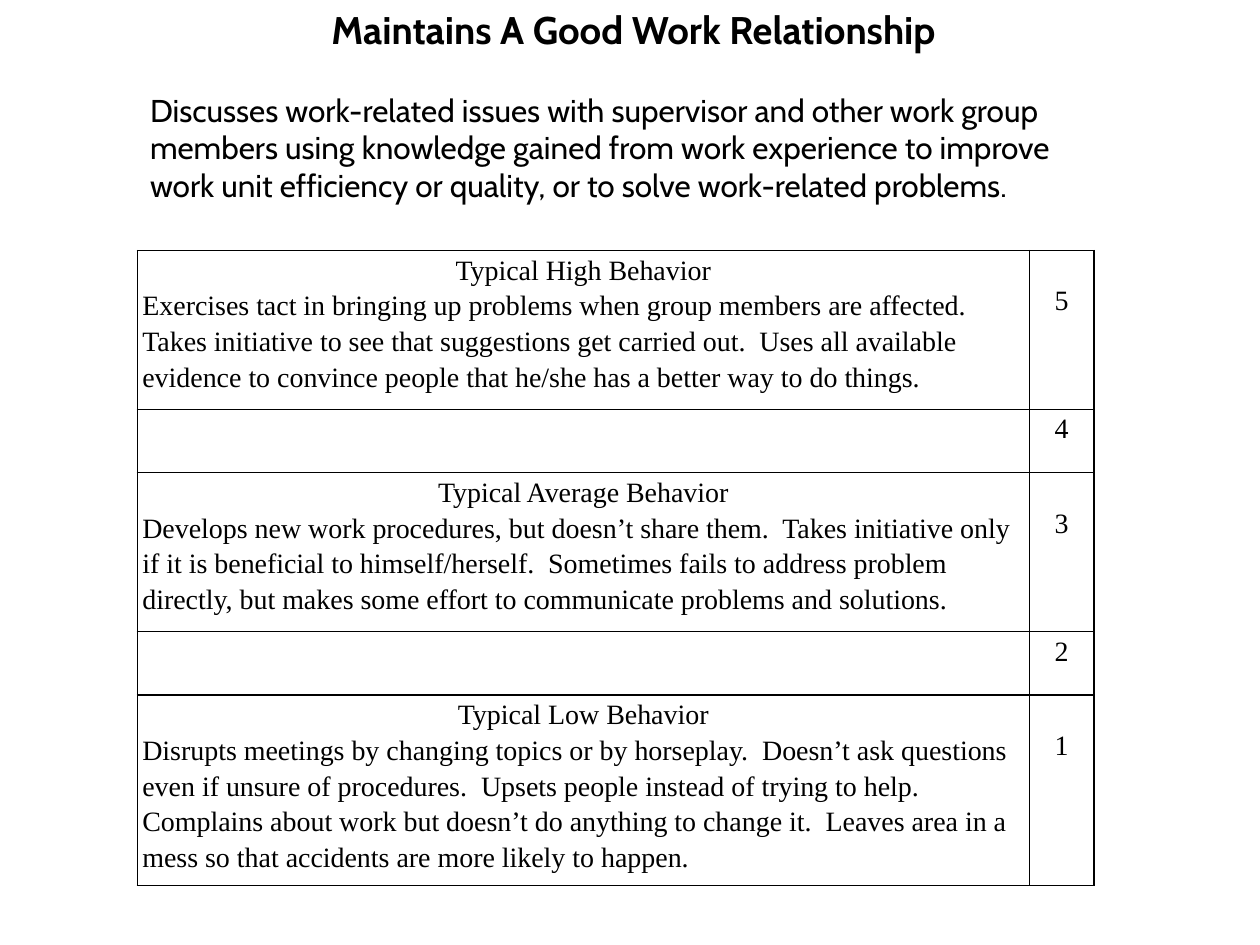
from dataclasses import dataclass

from lxml import etree
from pptx import Presentation
from pptx.dml.color import RGBColor
from pptx.enum.text import MSO_ANCHOR, MSO_AUTO_SIZE, PP_ALIGN
from pptx.oxml.ns import qn
from pptx.util import Cm, Pt

LEFT, CENTER = PP_ALIGN.LEFT, PP_ALIGN.CENTER
TOP = MSO_ANCHOR.TOP
FIXED = MSO_AUTO_SIZE.NONE
BLACK = "000000"
SANS, SERIF = "Cabin", "Times New Roman"
COLS = (17.98, 1.3)
TALL, SHORT, LAST = 3.2, 1.28, 3.84


@dataclass
class Level:
    score: str
    height: float
    drop: float = 0
    head: str = ""
    text: str = ""


LEVELS = [
    Level("5", TALL, 0.62, "Typical High Behavior",
          "Exercises tact in bringing up problems when group members are "
          "affected.  Takes initiative to see that suggestions get carried "
          "out.  Uses all available evidence to convince people that he/she "
          "has a better way to do things."),
    Level("4", SHORT),
    Level("3", TALL, 0.62, "Typical Average Behavior",
          "Develops new work procedures, but doesn’t share them.  Takes "
          "initiative only if it is beneficial to himself/herself.  Sometimes "
          "fails to address problem directly, but makes some effort to "
          "communicate problems and solutions."),
    Level("2", SHORT),
    Level("1", LAST, 0.62, "Typical Low Behavior",
          "Disrupts meetings by changing topics or by horseplay.  Doesn’t ask "
          "questions even if unsure of procedures.  Upsets people instead of "
          "trying to help.  Complains about work but doesn’t do anything to "
          "change it.  Leaves area in a mess so that accidents are more "
          "likely to happen."),
]
SUMMARY = [
    "Discusses work-related issues with supervisor and other work group",
    "members using knowledge gained from work experience to improve",
    "work unit efficiency or quality, or to solve work-related problems.",
]


def color(code: str) -> RGBColor:
    return RGBColor.from_string(code)


def write(frame, lines, font: str, size: float, space: float = 1,
          bold: bool = False) -> None:
    """Fill a text frame with (text, alignment) lines."""
    for i, (text, align) in enumerate(lines):
        para = frame.paragraphs[0] if i == 0 else frame.add_paragraph()
        props = para._p.get_or_add_pPr()
        props.set("marL", "0")
        props.set("indent", "0")
        etree.SubElement(props, qn("a:buNone"))
        para.alignment, para.line_spacing = align, space
        para.space_before = Pt(0)
        run = para.add_run()
        run.text = text
        run.font.name, run.font.size = font, Pt(size)
        run.font.bold = bold
        run.font.color.rgb = color(BLACK)


def place(shape, top: float, height: float):
    """Move a placeholder and return its text frame."""
    shape.left, shape.top = Cm(2.77), Cm(top)
    shape.width, shape.height = Cm(20), Cm(height)
    frame = shape.text_frame
    frame.word_wrap, frame.auto_size = True, FIXED
    frame.vertical_anchor = TOP
    return frame


def frame_cell(cell) -> None:
    """Clear the fill and draw a thin line on all four sides."""
    cell.fill.background()
    props = cell._tc.get_or_add_tcPr()
    for i, side in enumerate(("lnL", "lnR", "lnT", "lnB")):
        line = etree.Element(qn(f"a:{side}"), w=str(Pt(1)))
        fill = etree.SubElement(line, qn("a:solidFill"))
        etree.SubElement(fill, qn("a:srgbClr"), val=BLACK)
        props.insert(i, line)


def fill_cell(cell, lines, drop: float = 0) -> None:
    frame_cell(cell)
    if lines:
        cell.margin_left = cell.margin_right = Cm(0.1)
        cell.margin_top, cell.margin_bottom = Cm(drop), Cm(0)
        write(cell.text_frame, lines, SERIF, 16, 1.15)


def add_scale(slide, levels: list[Level]) -> None:
    high = sum(level.height for level in levels)
    table = slide.shapes.add_table(len(levels), len(COLS), Cm(2.77), Cm(5.05),
                                   Cm(sum(COLS)), Cm(high)).table
    table.first_row = table.horz_banding = False
    for col, width in zip(table.columns, COLS):
        col.width = Cm(width)
    for i, level in enumerate(levels):
        table.rows[i].height = Cm(level.height)
        lines = [(level.head, CENTER), (level.text, LEFT)] if level.head else []
        fill_cell(table.cell(i, 0), lines)
        fill_cell(table.cell(i, 1), [(level.score, CENTER)], level.drop)


def main() -> None:
    deck = Presentation()
    deck.slide_width, deck.slide_height = Cm(25.4), Cm(19.05)
    slide = deck.slides.add_slide(deck.slide_layouts[1])
    title, body = slide.placeholders
    write(place(title, 0, 1.3),
          [("Maintains A Good Work Relationship", CENTER)], SANS, 22, bold=True)
    write(place(body, 1.7, 3.3), [(line, LEFT) for line in SUMMARY], SANS, 18)
    add_scale(slide, LEVELS)
    deck.save("out.pptx")


if __name__ == "__main__":
    main()
